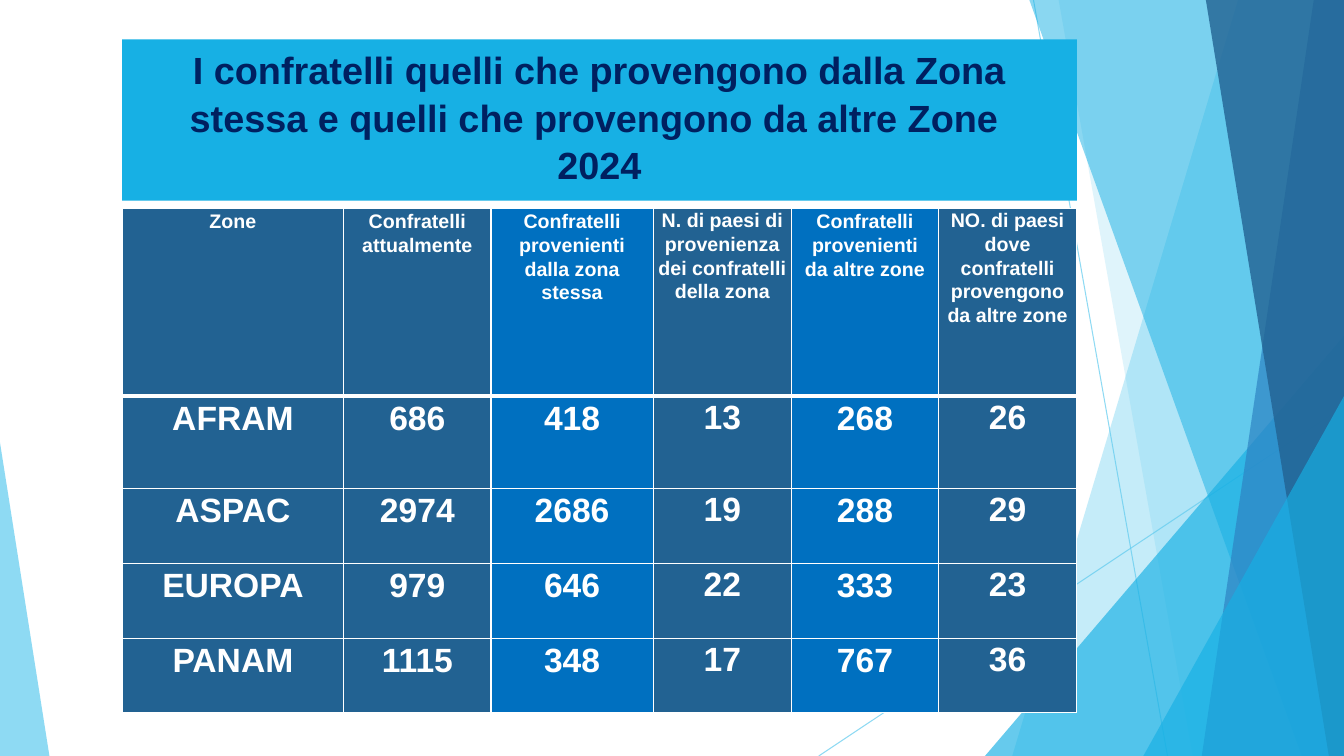
import pptx
import pptx.dml.color
import pptx.enum.shapes
import pptx.enum.text
import pptx.oxml
import pptx.util
from pptx.oxml.ns import qn

W, H = pptx.util.Inches(13.33), pptx.util.Inches(7.5)
SKY, CYAN, BLUE, STEEL, ROYAL = "5FCBEF", "17B0E4", "2E83C3", "226292", "0070C0"
WHITE, NAVY = "FFFFFF", "002060"
LEFT, WIDTH = 9.08, 71.04

RAYS = [(76.9, 0, 86.87, 100), (100, 53.73, 60.92, 100)]
BANDS = [(92.12, 75.32, SKY, 36), (78.77, 88.75, SKY, 20)]
FRONT_BANDS = [(76.59, 96.85, CYAN, 50), (97.75, 89.42, BLUE, 70), (89.72, 98.87, STEEL, 80)]
TITLE = "I confratelli quelli che provengono dalla Zona stessa e quelli che provengono da altre Zone \v2024"
COLUMNS = [16.5, 10.95, 12.08, 10.28, 10.95, 10.28]
COLUMN_FILLS = [STEEL, STEEL, ROYAL, STEEL, ROYAL, STEEL]
NARROW_COLUMNS = (3, 5)
ROWS = [24.8, 12.27, 9.87, 9.87, 9.87]
DATA = [
    ["Zone", "Confratelli attualmente", "Confratelli provenienti dalla zona stessa",
     "N. di paesi di provenienza dei confratelli della zona",
     "Confratelli provenienti da altre zone",
     "NO. di paesi dove confratelli provengono da altre zone"],
    ["AFRAM", "686", "418", "13", "268", "26"],
    ["ASPAC", "2974", "2686", "19", "288", "29"],
    ["EUROPA", "979", "646", "22", "333", "23"],
    ["PANAM", "1115", "348", "17", "767", "36"],
]


def x(share):
    """Return a percentage of the slide width."""
    return round(W * share / 100)


def y(share):
    """Return a percentage of the slide height."""
    return round(H * share / 100)


def paint(fmt, color, alpha=100):
    """Give a fill a solid colour with an opacity in percent."""
    fmt.solid()
    fmt.fore_color.rgb = pptx.dml.color.RGBColor.from_string(color)
    if alpha < 100:
        clr = fmt._xPr.find(qn("a:solidFill"))[0]
        pptx.oxml.parse_xml(f'<a:alpha xmlns:a="{clr.nsmap["a"]}" val="{alpha * 1000}"/>')
        clr.makeelement(qn("a:alpha"))
        node = clr.makeelement(qn("a:alpha"), val=str(alpha * 1000))
        clr.append(node)


def finish(sp, color, alpha):
    """Fill a shape and remove its outline and shadow."""
    paint(sp.fill, color, alpha)
    sp.line.fill.background()
    sp.shadow.inherit = False


def add_ray(slide, x1, y1, x2, y2):
    """Add a thin translucent line."""
    ln = slide.shapes.add_connector(
        pptx.enum.shapes.MSO_CONNECTOR.STRAIGHT, x(x1), y(y1), x(x2), y(y2))
    ln.line.width = pptx.util.Pt(0.75)
    paint(ln.line.fill, SKY, 70)
    props = ln._element.spPr
    props.append(props.makeelement(qn("a:effectLst")))


def add_band(slide, top, bottom, color, alpha):
    """Add a full-height band from a slanted edge to the right side."""
    builder = slide.shapes.build_freeform(x(top), 0)
    builder.add_line_segments([(W, 0), (W, H), (x(bottom), H)], close=True)
    finish(builder.convert_to_shape(), color, alpha)


def add_corner(slide, left, top, width, peak, color, alpha):
    """Add a triangle that stands on the bottom edge."""
    sp = slide.shapes.add_shape(
        pptx.enum.shapes.MSO_SHAPE.ISOSCELES_TRIANGLE, x(left), y(top), x(width), H - y(top))
    sp.adjustments[0] = peak
    finish(sp, color, alpha)


def format_paragraph(p, size, color, spacing):
    """Centre a paragraph and set its bold Arial runs."""
    p.alignment = pptx.enum.text.PP_ALIGN.CENTER
    p.line_spacing = spacing
    for r in p.runs:
        r.font.name = "Arial"
        r.font.size = pptx.util.Pt(size)
        r.font.bold = True
        r.font.color.rgb = pptx.dml.color.RGBColor.from_string(color)


def set_title(slide):
    """Place and format the title above the decoration."""
    sp = slide.shapes.title
    slide.shapes._spTree.append(sp._element)
    sp.left, sp.top, sp.width, sp.height = x(LEFT), y(5.2), x(WIDTH), y(21.33)
    paint(sp.fill, CYAN)
    tf = sp.text_frame
    tf.word_wrap = True
    tf.auto_size = pptx.enum.text.MSO_AUTO_SIZE.NONE
    tf.vertical_anchor = pptx.enum.text.MSO_ANCHOR.TOP
    p = tf.paragraphs[0]
    p.text = TITLE
    format_paragraph(p, 27, NAVY, 1.05)


def set_borders(cell, widths):
    """Draw white borders, given widths in points by side."""
    props = cell._tc.get_or_add_tcPr()
    for i, (side, width) in enumerate(widths.items()):
        ln = props.makeelement(qn(f"a:ln{side}"), w=str(pptx.util.Pt(width)))
        fill = ln.makeelement(qn("a:solidFill"))
        fill.append(fill.makeelement(qn("a:srgbClr"), val=WHITE))
        ln.append(fill)
        props.insert(i, ln)


def fill_cell(cell, text, row, col):
    """Write and format one table cell."""
    side, top = (0, 0) if col in NARROW_COLUMNS else (0.07, 0.01)
    cell.margin_left = cell.margin_right = pptx.util.Inches(side)
    cell.margin_top, cell.margin_bottom = pptx.util.Inches(top), 0
    paint(cell.fill, COLUMN_FILLS[col])
    set_borders(cell, {"L": 1, "R": 1, "T": 3 if row == 1 else 1, "B": 3 if row == 0 else 1})
    p = cell.text_frame.paragraphs[0]
    p.text = text
    p.space_after = pptx.util.Pt(8)
    format_paragraph(p, 24 if row else 14, WHITE, 1.07)


def add_zone_table(slide):
    """Add the table of confreres by zone."""
    table = slide.shapes.add_table(
        len(ROWS), len(COLUMNS), x(LEFT), y(27.6), x(WIDTH), y(sum(ROWS))).table
    for column, share in zip(table.columns, COLUMNS):
        column.width = x(share)
    for row, share in zip(table.rows, ROWS):
        row.height = y(share)
    for i, texts in enumerate(DATA):
        for j, text in enumerate(texts):
            fill_cell(table.cell(i, j), text, i, j)


def main():
    """Build the slide and save it."""
    prs = pptx.Presentation()
    prs.slide_width, prs.slide_height = W, H
    slide = prs.slides.add_slide(prs.slide_layouts[5])
    for ray in RAYS:
        add_ray(slide, *ray)
    for band in BANDS:
        add_band(slide, *band)
    add_corner(slide, 73.29, 44.4, 26.71, 1, CYAN, 66)
    for band in FRONT_BANDS:
        add_band(slide, *band)
    add_corner(slide, 85.07, 52.4, 14.93, 1, CYAN, 66)
    add_corner(slide, 0, 58.53, 3.68, 0, SKY, 70)
    set_title(slide)
    add_zone_table(slide)
    prs.save("out.pptx")


if __name__ == "__main__":
    main()
